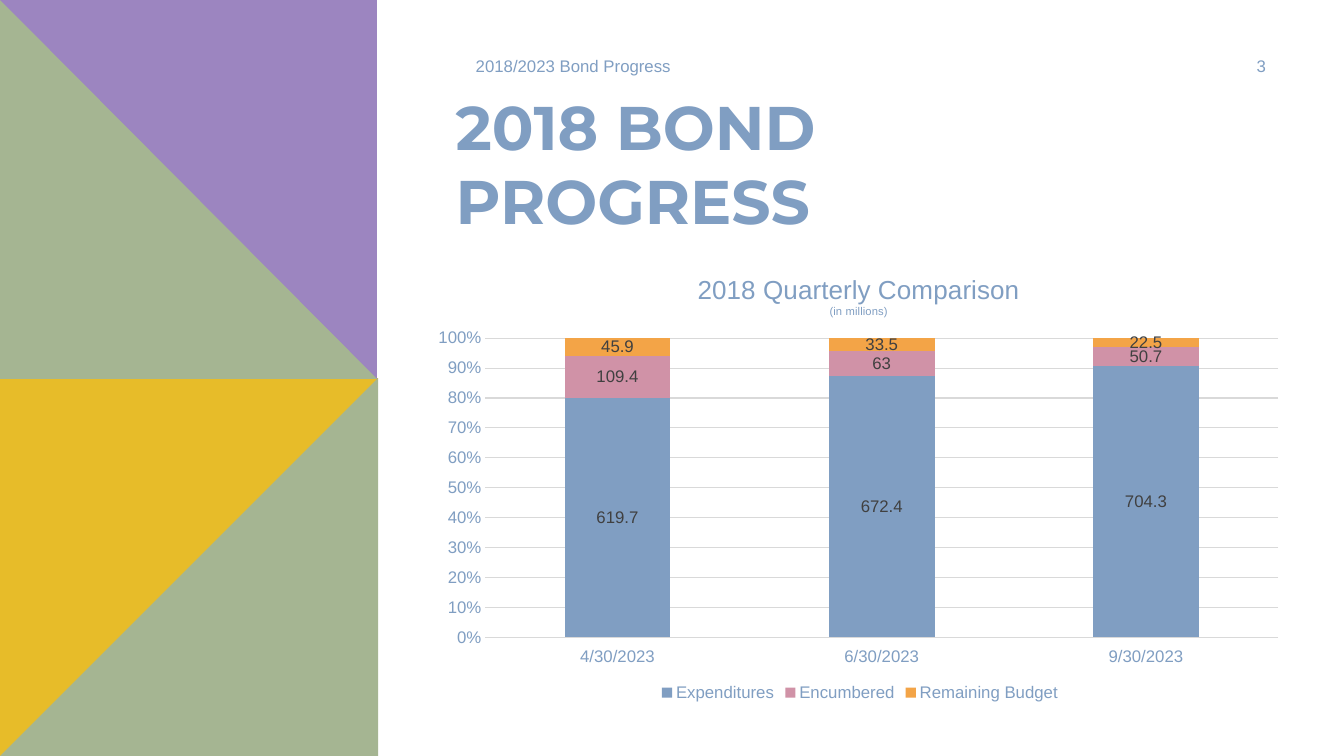
import pptx
import pptx.chart.data
import pptx.dml.color
import pptx.enum.chart
import pptx.enum.text
import pptx.oxml
import pptx.oxml.ns
import pptx.util
from pptx.util import Inches

COLORS = {
    "white": "FFFFFF", "blue": "809EC2", "pink": "D092A7", "orange": "F3A447",
    "purple": "9C85C0", "green": "A5B592", "yellow": "E7BC29",
    "grid": "D9D9D9", "label": "404040",
}
PANELS = [
    ("yellow", [(0, 3.75), (3.75, 3.75), (3.75, 7.5), (0, 7.5)]),
    ("green", [(3.75, 3.75), (3.75, 7.5), (0, 7.5)]),
    ("purple", [(0, 0), (3.74, 0), (3.74, 3.76), (0, 3.76)]),
    ("green", [(0, 0), (3.74, 3.76), (0, 3.76)]),
]
QUARTERS = ["4/30/2023", "6/30/2023", "9/30/2023"]
BOND_SERIES = [
    ("Expenditures", "blue", [619.7, 672.4, 704.3]),
    ("Encumbered", "pink", [109.4, 63, 50.7]),
    ("Remaining Budget", "orange", [45.9, 33.5, 22.5]),
]


def color(name):
    return pptx.dml.color.RGBColor.from_string(COLORS[name])


def place(parent, index, **fractions):
    """Give a chart part a manual layout, in fractions of the chart."""
    layout_tag = pptx.oxml.ns.qn("c:layout")
    for layout in parent.findall(layout_tag):
        parent.remove(layout)
    target = '<c:layoutTarget val="inner"/>' if "w" in fractions else ""
    modes = "".join(f'<c:{key}Mode val="edge"/>' for key in "xy")
    values = "".join(f'<c:{key} val="{value}"/>' for key, value in fractions.items())
    namespace = pptx.oxml.ns.nsdecls("c")
    parent.insert(index, pptx.oxml.parse_xml(
        f"<c:layout {namespace}><c:manualLayout>{target}{modes}{values}"
        "</c:manualLayout></c:layout>"))


class BondSlide:
    font_name = "Arial"
    heading_font = "Montserrat"
    body_size = 12

    def __init__(self, presentation):
        self.slide = presentation.slides.add_slide(presentation.slide_layouts[6])
        fill = self.slide.background.fill
        fill.solid()
        fill.fore_color.rgb = color("white")

    def style(self, font, size=None, color_name="blue", name=None, bold=False):
        font.size = pptx.util.Pt(size or self.body_size)
        font.name = name or self.font_name
        font.color.rgb = color(color_name)
        font.bold = bold

    def polygon(self, color_name, points):
        corners = [(Inches(x), Inches(y)) for x, y in points]
        builder = self.slide.shapes.build_freeform(*corners[0])
        builder.add_line_segments(corners[1:], close=True)
        shape = builder.convert_to_shape()
        shape.shadow.inherit = False
        shape.fill.solid()
        shape.fill.fore_color.rgb = color(color_name)
        shape.line.fill.background()

    def text(self, text, left, top, width, height, anchor="MIDDLE", align="LEFT", **style):
        box = self.slide.shapes.add_textbox(*map(Inches, (left, top, width, height)))
        frame = box.text_frame
        frame.word_wrap = True
        frame.vertical_anchor = pptx.enum.text.MSO_ANCHOR[anchor]
        frame.text = text
        paragraph = frame.paragraphs[0]
        paragraph.alignment = pptx.enum.text.PP_ALIGN[align]
        self.style(paragraph.runs[0].font, **style)

    def axis(self, axis):
        axis.major_tick_mark = pptx.enum.chart.XL_TICK_MARK.NONE
        axis.minor_tick_mark = pptx.enum.chart.XL_TICK_MARK.NONE
        axis.format.line.fill.background()
        self.style(axis.tick_labels.font)

    def chart_title(self, chart, lines):
        """Write (text, size) lines above the plot."""
        chart.has_title = True
        title = chart.chart_title
        title.include_in_layout = False
        title.text_frame.text = "\n".join(text for text, _ in lines)
        for paragraph, (_, size) in zip(title.text_frame.paragraphs, lines):
            paragraph.alignment = pptx.enum.text.PP_ALIGN.CENTER
            self.style(paragraph.runs[0].font, size)
        place(title.element, 1, x=0.31, y=0.04)

    def stacked_chart(self, left, top, width, height, categories, series_rows, title_lines):
        data = pptx.chart.data.CategoryChartData()
        data.categories = categories
        for name, _, values in series_rows:
            data.add_series(name, values)
        chart = self.slide.shapes.add_chart(
            pptx.enum.chart.XL_CHART_TYPE.COLUMN_STACKED_100,
            *map(Inches, (left, top, width, height)), data).chart
        self.style(chart.font)
        self.chart_title(chart, title_lines)
        place(chart.element.chart.plotArea, 0, x=0.07, y=0.19, w=0.91, h=0.66)

        chart.has_legend = True
        chart.legend.position = pptx.enum.chart.XL_LEGEND_POSITION.BOTTOM
        chart.legend.include_in_layout = False
        self.style(chart.legend.font)

        self.axis(chart.category_axis)
        self.axis(chart.value_axis)
        chart.category_axis.tick_label_position = pptx.enum.chart.XL_TICK_LABEL_POSITION.LOW
        chart.value_axis.tick_labels.number_format = "0%"
        chart.value_axis.tick_labels.number_format_is_linked = False
        gridline = chart.value_axis.major_gridlines.format.line
        gridline.color.rgb = color("grid")
        gridline.width = pptx.util.Pt(0.75)

        plot = chart.plots[0]
        plot.gap_width = 150
        plot.overlap = 100
        plot.vary_by_categories = False
        for series, (_, color_name, _) in zip(plot.series, series_rows):
            series.format.fill.solid()
            series.format.fill.fore_color.rgb = color(color_name)
            series.data_labels.show_value = True
            self.style(series.data_labels.font, color_name="label")


def main():
    presentation = pptx.Presentation()
    presentation.slide_width = Inches(13.33)
    presentation.slide_height = Inches(7.5)

    slide = BondSlide(presentation)
    for color_name, points in PANELS:
        slide.polygon(color_name, points)
    slide.text("2018 BOND PROGRESS", 4.42, 0.83, 7.4, 0.84, anchor="TOP",
               size=44, name=slide.heading_font, bold=True)
    slide.stacked_chart(4.21, 2.5, 8.64, 4.5, QUARTERS, BOND_SERIES,
                        [("2018 Quarterly Comparison", 18.6), ("(in millions)", 8)])
    slide.text("2018/2023 Bond Progress", 4.62, 0.5, 3.5, 0.3)
    slide.text("3", 11.97, 0.5, 1.08, 0.3, align="CENTER")
    presentation.save("out.pptx")


if __name__ == "__main__":
    main()
